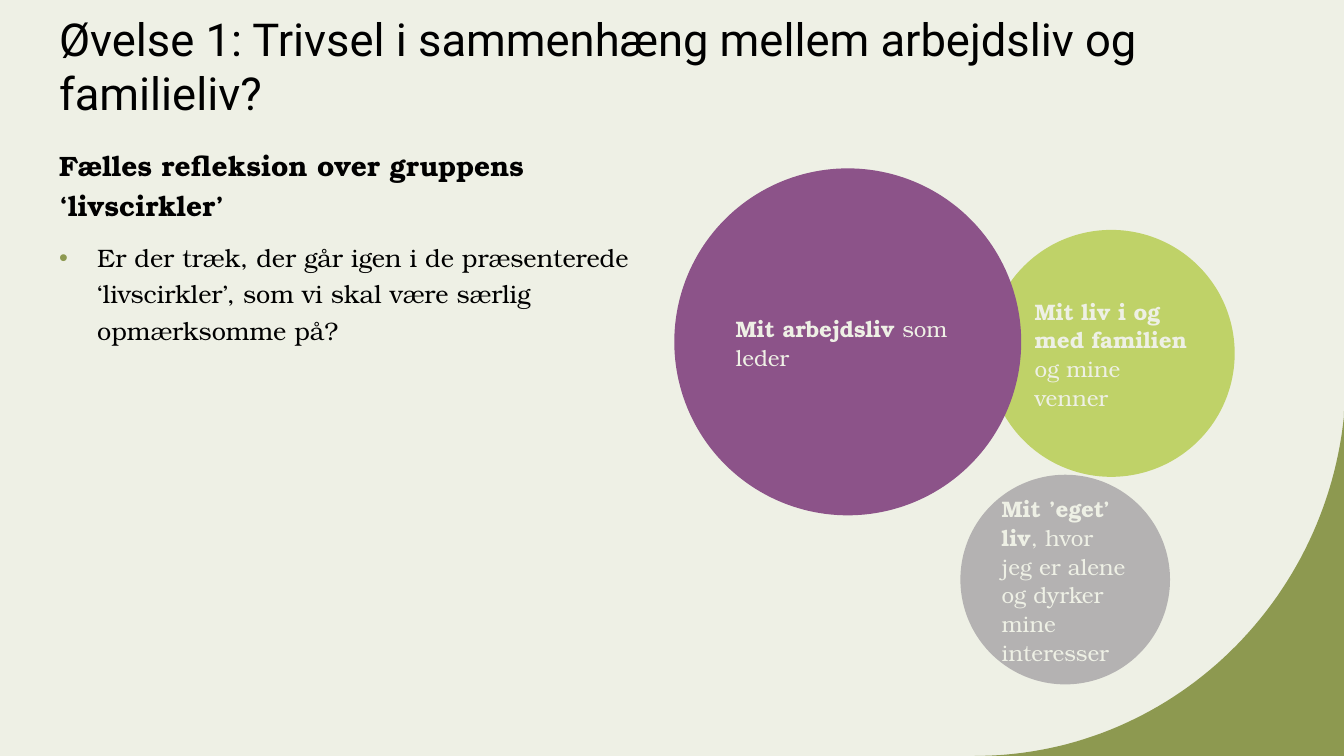
from dataclasses import dataclass

from lxml.etree import SubElement
from pptx import Presentation
from pptx.dml.color import RGBColor
from pptx.enum.shapes import MSO_SHAPE
from pptx.enum.text import MSO_ANCHOR, PP_ALIGN
from pptx.oxml.ns import qn
from pptx.util import Cm, Pt


@dataclass(frozen=True)
class Theme:
    paper: str = "EEF0E5"
    ink: str = "000000"
    olive: str = "8D9950"
    lime: str = "BFD268"
    purple: str = "8C5389"
    grey: str = "B4B2B2"
    title_font: str = "Roboto"
    body_font: str = "TeX Gyre Bonum"
    title_size: float = 32.4
    heading_size: float = 20
    bullet_size: float = 18
    circle_size: float = 16


THEME = Theme()


def paint(shape, colour):
    shape.shadow.inherit = False
    shape.fill.solid()
    shape.fill.fore_color.rgb = RGBColor.from_string(colour)


def style(paragraph, font_name, size, colour):
    paragraph.alignment = PP_ALIGN.LEFT
    paragraph.font.name = font_name
    paragraph.font.size = Pt(size)
    paragraph.font.color.rgb = RGBColor.from_string(colour)


def add_bullet(paragraph, colour, indent):
    properties = paragraph._p.get_or_add_pPr()
    properties.set("marL", str(indent))
    properties.set("indent", str(-indent))
    bullet_colour = SubElement(properties, qn("a:buClr"))
    SubElement(bullet_colour, qn("a:srgbClr"), val=colour)
    SubElement(properties, qn("a:buFont"), typeface="Arial")
    SubElement(properties, qn("a:buChar"), char="•")


def add_text_frame(slide, left, top, width, height):
    frame = slide.shapes.add_textbox(Cm(left), Cm(top), Cm(width), Cm(height)).text_frame
    frame.word_wrap = True
    return frame


def add_corner(slide, left, top, width, height, steps=60):
    start, pull_out, pull_in, end = (
        (0, height), (0.52 * width, height), (0.947 * width, 0.567 * height), (width, 0.015 * height),
    )

    def arc_point(t):
        return tuple(
            Cm(offset + (1 - t) ** 3 * a + 3 * (1 - t) ** 2 * t * b + 3 * (1 - t) * t**2 * c + t**3 * d)
            for offset, a, b, c, d in zip((left, top), start, pull_out, pull_in, end)
        )

    outline = [arc_point(step / steps) for step in range(1, steps + 1)]
    outline += [(Cm(left + width), Cm(top)), (Cm(left + width), Cm(top + height))]
    builder = slide.shapes.build_freeform(Cm(left), Cm(top + height))
    builder.add_line_segments(outline, close=True)
    corner = builder.convert_to_shape()
    paint(corner, THEME.olive)
    corner.line.fill.background()


def add_title(slide, left, top, width, height, title):
    frame = add_text_frame(slide, left, top, width, height)
    frame.vertical_anchor = MSO_ANCHOR.MIDDLE
    paragraph = frame.paragraphs[0]
    paragraph.text = title
    style(paragraph, THEME.title_font, THEME.title_size, THEME.ink)


def add_reflection(slide, left, top, width, height, heading, question):
    frame = add_text_frame(slide, left, top, width, height)
    heading_line = frame.paragraphs[0]
    question_line = frame.add_paragraph()
    add_bullet(question_line, THEME.olive, Cm(0.96))
    question_line.space_before = Pt(10)
    for paragraph, words, size in (
        (heading_line, heading, THEME.heading_size),
        (question_line, question, THEME.bullet_size),
    ):
        paragraph.text = words
        paragraph.line_spacing = 1.2
        style(paragraph, THEME.body_font, size, THEME.ink)
    heading_line.font.bold = True


def add_life_circle(slide, left, top, diameter, colour, lead, rest):
    circle = slide.shapes.add_shape(MSO_SHAPE.OVAL, Cm(left), Cm(top), Cm(diameter), Cm(diameter))
    paint(circle, colour)
    circle.line.color.rgb = RGBColor.from_string(colour)
    circle.line.width = Pt(1.5)
    frame = circle.text_frame
    frame.word_wrap = True
    frame.vertical_anchor = MSO_ANCHOR.MIDDLE
    paragraph = frame.paragraphs[0]
    paragraph.line_spacing = 1.07
    paragraph.space_after = Pt(8)
    style(paragraph, THEME.body_font, THEME.circle_size, THEME.paper)
    for words, bold in ((lead, True), (rest, False)):
        run = paragraph.add_run()
        run.text = words
        run.font.bold = bold


def build_exercise_slide(presentation):
    slide = presentation.slides.add_slide(presentation.slide_layouts[6])
    slide.background.fill.solid()
    slide.background.fill.fore_color.rgb = RGBColor.from_string(THEME.paper)
    add_corner(slide, 24.56, 10.36, 9.31, 8.69)
    add_life_circle(slide, 24.92, 5.82, 6.17, THEME.lime,
                    "Mit liv i og med familien ", "og mine venner")
    add_title(slide, 1.24, 0.2, 28.47, 2.9,
              "Øvelse 1: Trivsel i sammenhæng mellem arbejdsliv og familieliv?")
    add_reflection(slide, 1.24, 3.45, 15.65, 11.68,
                   "Fælles refleksion over gruppens ‘livscirkler’",
                   "Er der træk, der går igen i de præsenterede ‘livscirkler’, "
                   "som vi skal være særlig opmærksomme på?")
    add_life_circle(slide, 17.02, 4.27, 8.69, THEME.purple, "Mit arbejdsliv ", "som leder")
    add_life_circle(slide, 24.23, 11.99, 5.23, THEME.grey,
                    "Mit ’eget’ liv", ", hvor jeg er alene og dyrker mine interesser")


def main():
    presentation = Presentation()
    presentation.slide_width = Cm(33.87)
    presentation.slide_height = Cm(19.05)
    build_exercise_slide(presentation)
    presentation.save("out.pptx")


if __name__ == "__main__":
    main()
